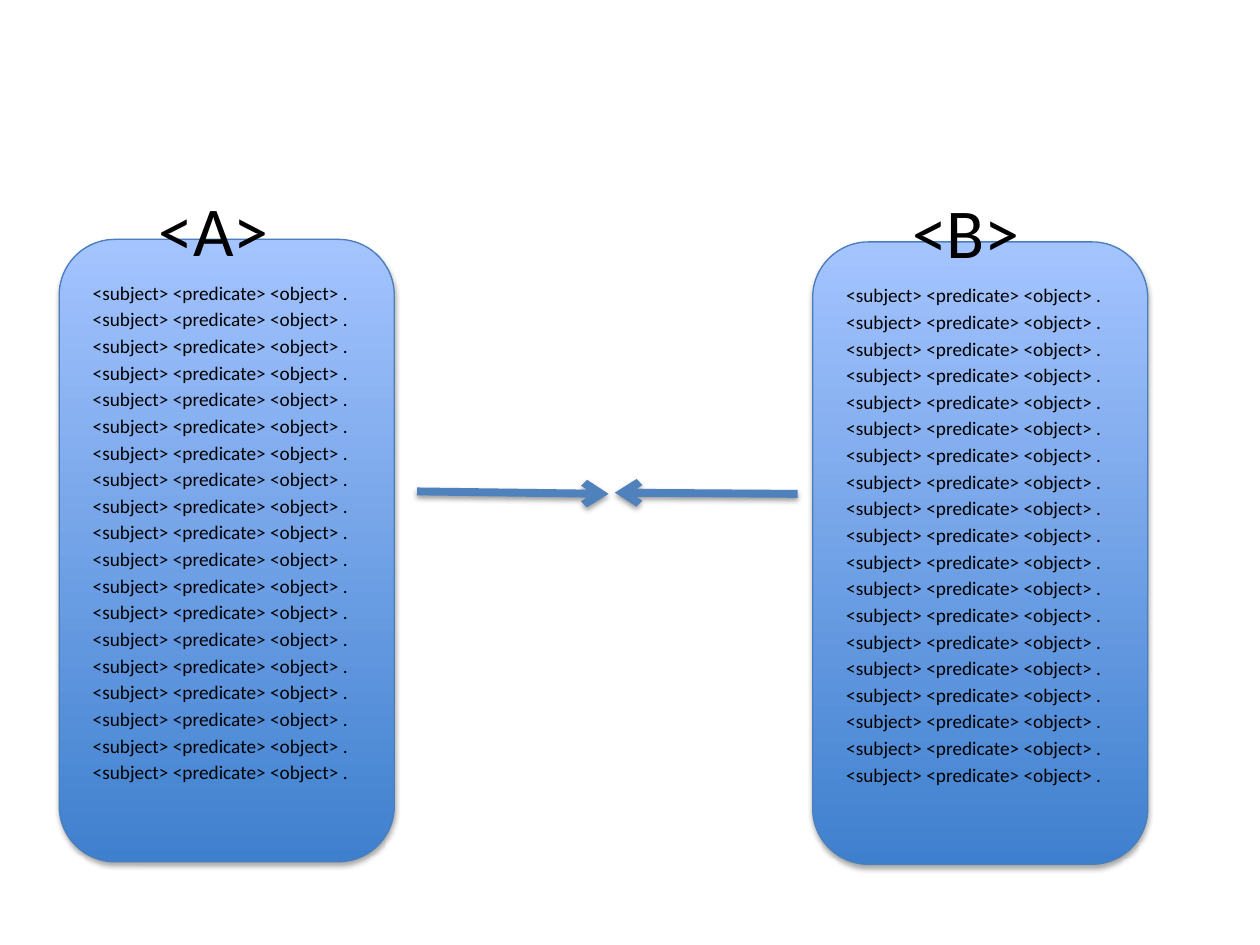
from pptx import Presentation
from pptx import util as u
from pptx import oxml
from pptx.dml.color import RGBColor
from pptx.enum import shapes, text
from pptx.oxml.ns import nsdecls

COLORS = {
    "low": "3F80CE",
    "high": "A4C4FF",
    "edge": "4B7EBC",
    "arrow": "4F81BD",
    "ink": "000000",
}
TRIPLE = "<subject> <predicate> <object> ."
COUNT = 19


def rgb(name):
    return RGBColor.from_string(COLORS[name])


def add_shade(shape, dist, alpha):
    shape.element.spPr.append(oxml.parse_xml(
        f'<a:effectLst {nsdecls("a")}>'
        f'<a:outerShdw blurRad="{u.Pt(3.1)}" dist="{u.Pt(dist)}" dir="5400000" rotWithShape="0">'
        f'<a:srgbClr val="{COLORS["ink"]}"><a:alpha val="{alpha * 1000}"/></a:srgbClr>'
        '</a:outerShdw></a:effectLst>'))


def style(para, size):
    para.font.name = "Calibri"
    para.font.size = u.Pt(size)
    para.font.color.rgb = rgb("ink")


def add_panel(slide, x, y):
    panel = slide.shapes.add_shape(
        shapes.MSO_SHAPE.ROUNDED_RECTANGLE,
        u.Inches(x), u.Inches(y), u.Inches(2.66), u.Inches(4.94))
    panel.fill.gradient()
    panel.fill.gradient_angle = 90
    for stop, name in zip(panel.fill.gradient_stops, ("low", "high")):
        stop.color.rgb = rgb(name)
    panel.line.color.rgb = rgb("edge")
    panel.line.width = u.Pt(0.75)
    add_shade(panel, 1.8, 35)


def add_triples(slide, x, y):
    box = slide.shapes.add_textbox(
        u.Inches(x), u.Inches(y), u.Inches(2.5), u.Inches(4.95))
    frame = box.text_frame
    frame.word_wrap = True
    frame.margin_top = u.Inches(0.48)
    frame.text = "\n".join([TRIPLE] * COUNT)
    for para in frame.paragraphs:
        para.alignment = text.PP_ALIGN.CENTER
        para.space_before = u.Pt(2)
        style(para, 11)


def add_label(slide, label, x, y, width):
    box = slide.shapes.add_textbox(
        u.Inches(x), u.Inches(y), u.Inches(width), u.Inches(0.77))
    frame = box.text_frame
    frame.word_wrap = False
    frame.auto_size = text.MSO_AUTO_SIZE.SHAPE_TO_FIT_TEXT
    frame.text = label
    style(frame.paragraphs[0], 40)


def add_graph(slide, label, x, y, shift, width):
    add_panel(slide, x, y)
    add_triples(slide, x + 0.03, y - 0.15)
    add_label(slide, label, x + shift, y - 0.47, width)


def add_arrow(slide, *ends):
    arrow = slide.shapes.add_connector(
        shapes.MSO_CONNECTOR.STRAIGHT, *map(u.Inches, ends))
    arrow.line.color.rgb = rgb("arrow")
    arrow.line.width = u.Pt(4.5)
    arrow.element.spPr.ln.append(
        oxml.parse_xml(f'<a:tailEnd {nsdecls("a")} type="arrow"/>'))
    add_shade(arrow, 1.6, 38)


def main():
    deck = Presentation()
    deck.slide_width, deck.slide_height = u.Inches(10), u.Inches(7.5)
    slide = deck.slides.add_slide(deck.slide_layouts[6])
    add_graph(slide, "<A>", 0.47, 1.9, 0.69, 1.09)
    add_graph(slide, "<B>", 6.45, 1.92, 0.69, 1.07)
    add_arrow(slide, 6.33, 3.92, 4.88, 3.91)
    add_arrow(slide, 3.31, 3.9, 4.83, 3.92)
    deck.save("out.pptx")


if __name__ == "__main__":
    main()
